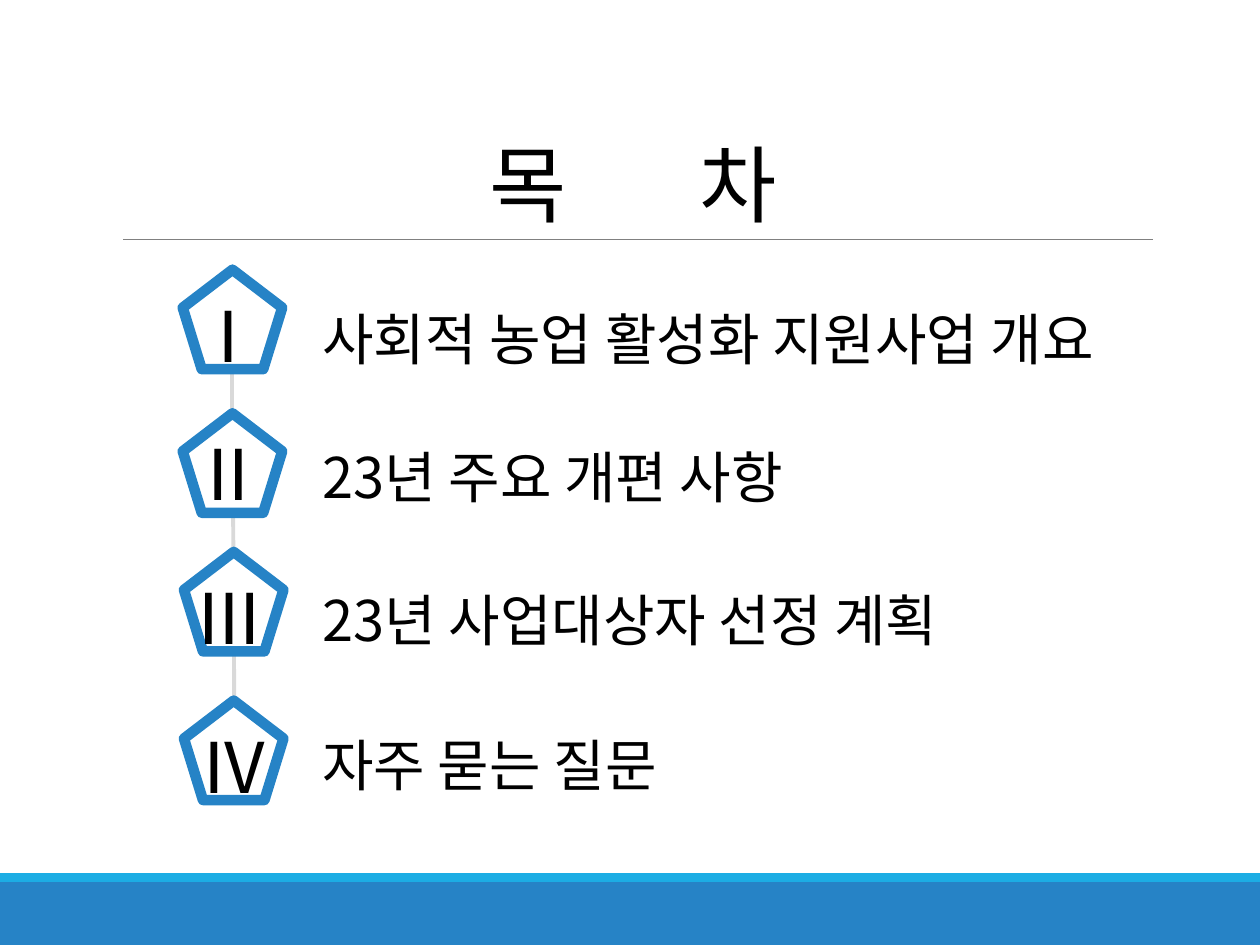
from collections import namedtuple
from dataclasses import dataclass

from lxml.etree import SubElement
from pptx import Presentation
from pptx.dml.color import RGBColor
from pptx.enum.shapes import MSO_CONNECTOR, MSO_SHAPE
from pptx.enum.text import MSO_ANCHOR, MSO_AUTO_SIZE, PP_ALIGN
from pptx.oxml.ns import qn
from pptx.util import Inches, Pt


@dataclass(frozen=True)
class Theme:
    blue: str = "2683C6"
    sky: str = "1CADE4"
    white: str = "FFFFFF"
    ink: str = "000000"
    rule: str = "808080"
    link: str = "D9D9D9"
    title_font: str = "Calibri"
    body_font: str = "Noto Sans CJK KR"
    title_size: int = 48
    numeral_size: int = 40
    entry_size: int = 32


THEME = Theme()
COLUMNS, ROWS = 100, 75
CELL = Inches(0.1)
BADGE_SIZE = 7.9

# Positions are in grid cells; numeral_dx and numeral_dy are offsets from the badge.
Entry = namedtuple("Entry", "numeral text badge_left badge_top numeral_dx numeral_dy text_top")
ENTRIES = [
    Entry("Ⅰ", "사회적 농업 활성화 지원사업 개요", 14.5, 21.4, -0.7, 1.3, 21),
    Entry("Ⅱ", "23년 주요 개편 사항", 14.5, 32.8, -0.7, 0.9, 32),
    Entry("Ⅲ", "23년 사업대상자 선정 계획", 14.6, 43.8, -0.7, 1.3, 43.3),
    Entry("Ⅳ", "자주 묻는 질문", 14.6, 55.6, -0.3, 1.3, 54.8),
]


def cells(*counts):
    return [round(count * CELL) for count in counts]


def color(code):
    return RGBColor.from_string(code)


def add_line(shapes, start, end, line_color, width):
    line = shapes.add_connector(MSO_CONNECTOR.STRAIGHT, *cells(*start, *end))
    line.line.color.rgb = color(line_color)
    line.line.width = Pt(width)
    SubElement(line._element.spPr, qn("a:effectLst"))


def add_band(shapes, top, height, fill):
    band = shapes.add_shape(MSO_SHAPE.RECTANGLE, *cells(0, top, COLUMNS, height))
    band.shadow.inherit = False
    band.fill.solid()
    band.fill.fore_color.rgb = color(fill)
    band.line.fill.background()


def style_span(span, font, size, spacing=0):
    """Set the Latin and East Asian font, size, colour and letter spacing in points."""
    span.font.name = font
    span.font.size = Pt(size)
    span.font.color.rgb = color(THEME.ink)
    properties = span.font._element
    SubElement(properties, qn("a:ea"), typeface=THEME.body_font)
    if spacing:
        properties.set("spc", str(round(spacing * 100)))


def add_text_box(shapes, area, line_spacing, align=PP_ALIGN.LEFT):
    """Return the box and its first paragraph."""
    box = shapes.add_textbox(*cells(*area))
    box.text_frame.word_wrap = True
    para = box.text_frame.paragraphs[0]
    para.alignment = align
    para.line_spacing = line_spacing
    return box, para


def add_label(shapes, area, text, size, line_spacing=1.0, align=PP_ALIGN.LEFT, spacing=0):
    box, para = add_text_box(shapes, area, line_spacing, align)
    box.text_frame.auto_size = MSO_AUTO_SIZE.SHAPE_TO_FIT_TEXT
    para.text = text
    style_span(para.runs[0], THEME.body_font, size, spacing)


def add_title(shapes):
    """Spread the two syllables with letter spacing on the space between them."""
    box, para = add_text_box(shapes, (9, 3.1, 82.5, 15.9), 0.85, PP_ALIGN.CENTER)
    box.text_frame.vertical_anchor = MSO_ANCHOR.BOTTOM
    for text, spacing in (("목", -0.5), (" ", 65), ("차", -0.5)):
        span = para.add_run()
        span.text = text
        style_span(span, THEME.title_font, THEME.title_size, spacing)


def add_badge(shapes, entry):
    group = shapes.add_group_shape()
    pentagon = group.shapes.add_shape(
        MSO_SHAPE.REGULAR_PENTAGON,
        *cells(entry.badge_left, entry.badge_top, BADGE_SIZE, BADGE_SIZE))
    pentagon.shadow.inherit = False
    pentagon.fill.solid()
    pentagon.fill.fore_color.rgb = color(THEME.white)
    pentagon.line.color.rgb = color(THEME.blue)
    pentagon.line.width = Pt(6)
    SubElement(pentagon.line._get_or_add_ln(), qn("a:round"))
    area = (entry.badge_left + entry.numeral_dx, entry.badge_top + entry.numeral_dy, 8.7, 7.7)
    add_label(group.shapes, area, entry.numeral, THEME.numeral_size,
              align=PP_ALIGN.CENTER, spacing=-3)


def main():
    deck = Presentation()
    deck.slide_width, deck.slide_height = cells(COLUMNS, ROWS)
    shapes = deck.slides.add_slide(deck.slide_layouts[6]).shapes

    add_band(shapes, 70, 5, THEME.blue)
    add_band(shapes, 69.3, 0.7, THEME.sky)
    add_line(shapes, (9.8, 19), (91.5, 19), THEME.rule, 0.5)
    add_line(shapes, (18.5, 40.3), (18.6, 57.2), THEME.link, 2.25)
    add_line(shapes, (18.4, 29.3), (18.4, 32.8), THEME.link, 2.25)
    add_title(shapes)
    for entry in ENTRIES:
        add_badge(shapes, entry)
        add_label(shapes, (24.6, entry.text_top, 66.9, 8.4), entry.text,
                  THEME.entry_size, line_spacing=1.5)

    deck.save("out.pptx")


if __name__ == "__main__":
    main()
